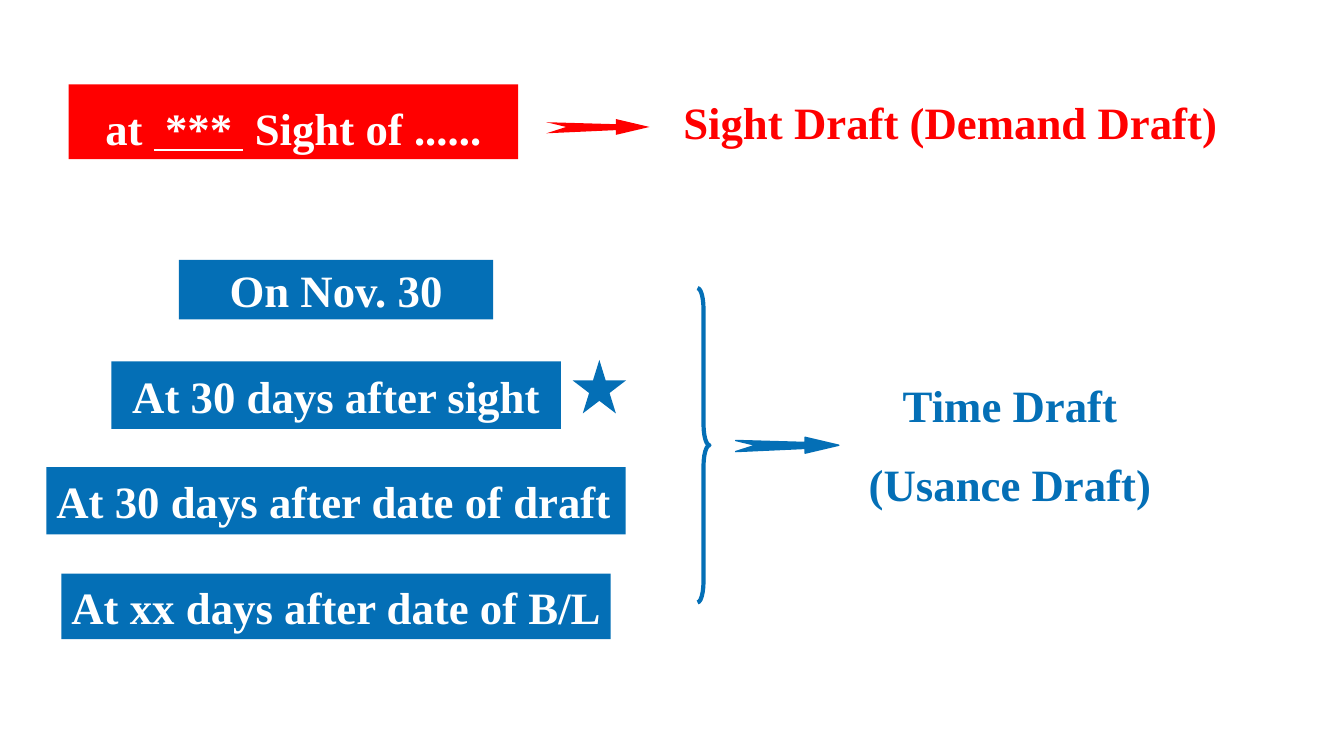
from pptx import Presentation
from pptx.dml.color import RGBColor
from pptx.enum.shapes import MSO_SHAPE as Preset
from pptx.enum.text import MSO_ANCHOR as Anchor, PP_ALIGN as Align
from pptx.util import Cm, Pt

RED, BLUE, WHITE = "FF0000", "046FB6", "FFFFFF"
# Arrow outline in hundredths of a centimetre, 2.6 cm long and 0.4 cm high
ARROW = [(175, 0), (260, 20), (175, 40), (175, 28),
         (0, 36), (50, 20), (0, 8), (175, 13)]


def color(hex_code):
    return RGBColor.from_string(hex_code)


def paint(shape, fill=None, line=None, weight=1):
    shape.shadow.inherit = False
    if fill:
        shape.fill.solid()
        shape.fill.fore_color.rgb = color(fill)
    else:
        shape.fill.background()
    if line:
        shape.line.color.rgb = color(line)
        shape.line.width = Pt(weight)
    else:
        shape.line.fill.background()


def write(shape, *paragraphs, ink=WHITE, align=Align.CENTER, anchor=Anchor.MIDDLE,
          wrap=True, spacing=None, gap=18):
    """Each paragraph is a list of (text, underlined) runs."""
    frame = shape.text_frame
    frame.word_wrap = wrap
    frame.vertical_anchor = anchor
    for index, runs in enumerate(paragraphs):
        paragraph = frame.add_paragraph() if index else frame.paragraphs[0]
        paragraph.alignment = align
        if spacing:
            paragraph.line_spacing = spacing
        if index:
            paragraph.space_before = Pt(gap)
        for text, underlined in runs:
            run = paragraph.add_run()
            run.text = text
            run.font.name = "Times New Roman"
            run.font.size = Pt(32)
            run.font.bold = True
            run.font.underline = underlined
            run.font.color.rgb = color(ink)


def add_preset(slide, preset, left, top, width, height, **look):
    shape = slide.shapes.add_shape(preset, Cm(left), Cm(top), Cm(width), Cm(height))
    paint(shape, **look)
    return shape


def add_label(slide, left, top, width, height, *lines, **style):
    label = slide.shapes.add_textbox(Cm(left), Cm(top), Cm(width), Cm(height))
    write(label, *([(line, False)] for line in lines), anchor=Anchor.TOP, **style)


def add_arrow(slide, left, top, fill, line=None):
    outline = slide.shapes.build_freeform(*ARROW[0], scale=Cm(0.01))
    outline.add_line_segments(ARROW[1:], close=True)
    paint(outline.convert_to_shape(Cm(left), Cm(top)), fill, line)


def sight_draft(slide, left, top):
    # Tenor wording, arrow and the name of the draft
    tenor = add_preset(slide, Preset.RECTANGLE, left, top, 11.33, 1.88, fill=RED)
    write(tenor, [("at ", False), (" *** ", True), (" Sight of ......", False)],
          spacing=1.2)
    add_arrow(slide, left + 12.04, top + 0.87, RED)
    add_label(slide, left + 15.24, top + 0.13, 15.32, 1.63,
              "Sight Draft (Demand Draft)", ink=RED, align=Align.LEFT)


def time_draft(slide, left, top):
    # Tenors centred on one axis at an equal pitch
    axis, first_middle, pitch = left + 7.3, top + 0.75, 2.66
    tenors = [("On Nov. 30", 7.92, 1.5, Align.CENTER),
              ("At 30 days after sight", 11.33, 1.7, Align.CENTER),
              ("At 30 days after date of draft", 14.6, 1.7, Align.LEFT),
              ("At xx days after date of B/L", 13.84, 1.65, Align.LEFT)]
    for row, (wording, width, height, align) in enumerate(tenors):
        middle = first_middle + row * pitch
        tenor = add_preset(slide, Preset.RECTANGLE, axis - width / 2,
                           middle - height / 2, width, height, fill=BLUE)
        write(tenor, [(wording, False)], align=align, wrap=False)

    # Star beside the second tenor
    add_preset(slide, Preset.STAR_5_POINT, left + 13.26, top + 2.52, 1.35, 1.35,
               fill=BLUE)

    # Brace, arrow and the name of the draft
    brace = add_preset(slide, Preset.RIGHT_BRACE, left + 16.41, top + 0.71, 0.3, 7.92,
                       line=BLUE, weight=3)
    brace.adjustments[0] = 1.76
    brace.adjustments[1] = 0.5
    add_arrow(slide, left + 17.37, top + 4.47, BLUE, BLUE)
    add_label(slide, left + 19.99, top + 2.85, 8.59, 3.66,
              "Time Draft", "(Usance Draft)", ink=BLUE)


def main():
    deck = Presentation()
    deck.slide_width, deck.slide_height = Cm(33.87), Cm(19.05)
    slide = deck.slides.add_slide(deck.slide_layouts[6])
    sight_draft(slide, 1.73, 2.13)
    time_draft(slide, 1.17, 6.55)
    deck.save("out.pptx")


if __name__ == "__main__":
    main()
